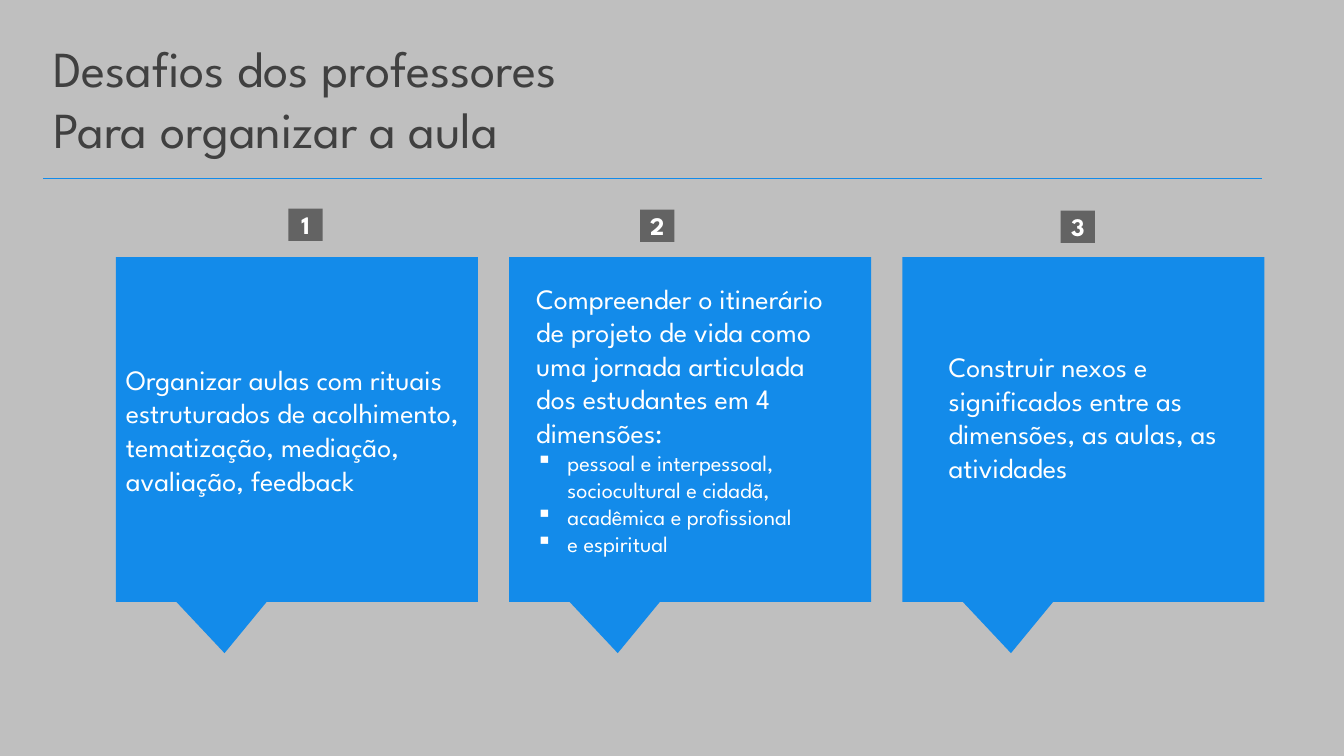
from dataclasses import dataclass

from lxml.etree import SubElement
from pptx import Presentation
from pptx.dml.color import RGBColor
from pptx.enum.shapes import MSO_CONNECTOR, MSO_SHAPE
from pptx.enum.text import MSO_ANCHOR, PP_ALIGN
from pptx.oxml.ns import qn
from pptx.util import Inches, Pt


@dataclass(frozen=True)
class Theme:
    font: str = "League Spartan"
    background: str = "BFBFBF"
    accent: str = "138BEA"
    badge: str = "636363"
    title: str = "404040"
    light: str = "FFFFFF"
    title_size: int = 36
    body_size: int = 20
    badge_size: int = 18
    bullet_size: int = 16


THEME = Theme()
CARD_LEFT, CARD_PITCH = 1.15, 3.9
BADGE_CORNERS = [(2.86, 2.07), (6.35, 2.08), (10.52, 2.09)]
RITUALS = ("Organizar aulas com rituais estruturados de acolhimento, "
           "tematização, mediação, avaliação, feedback")
JOURNEY = ("Compreender o itinerário de projeto de vida como uma jornada "
           "articulada dos estudantes em 4 dimensões:")
DIMENSIONS = [
    "pessoal e interpessoal, sociocultural e cidadã,",
    "acadêmica e profissional",
    "e espiritual",
]
CONNECTIONS = ("Construir nexos e significados entre as dimensões, "
               "as aulas, as atividades")


def color(value):
    return RGBColor.from_string(value)


def add_paragraph(frame, text, size, ink=THEME.light, bold=False,
                  align=PP_ALIGN.LEFT):
    first = frame.paragraphs[0]
    paragraph = frame.add_paragraph() if first.runs else first
    paragraph.text = text
    paragraph.alignment = align
    paragraph.font.name = THEME.font
    paragraph.font.size = Pt(size)
    paragraph.font.bold = bold
    paragraph.font.color.rgb = color(ink)
    return paragraph


def add_bullet(frame, text):
    properties = add_paragraph(frame, text, THEME.bullet_size)._p.get_or_add_pPr()
    properties.set("marL", str(Inches(0.31)))
    properties.set("indent", str(-Inches(0.31)))
    bullet = SubElement(properties, qn("a:buChar"))
    bullet.set("char", "▪")
    properties.insert_element_before(bullet, "a:tabLst", "a:defRPr", "a:extLst")


def add_text_frame(slide, left, top, width, height):
    area = slide.shapes.add_textbox(Inches(left), Inches(top),
                                    Inches(width), Inches(height))
    area.text_frame.word_wrap = True
    return area.text_frame


def add_block(slide, preset, left, top, width, height, fill):
    block = slide.shapes.add_shape(preset, Inches(left), Inches(top),
                                   Inches(width), Inches(height))
    block.shadow.inherit = False
    block.fill.solid()
    block.fill.fore_color.rgb = color(fill)
    block.line.fill.background()
    block.text_frame.word_wrap = True
    block.text_frame.vertical_anchor = MSO_ANCHOR.MIDDLE
    return block


def add_callout(slide, column):
    callout = add_block(slide, MSO_SHAPE.RECTANGULAR_CALLOUT,
                        CARD_LEFT + column * CARD_PITCH, 2.55, 3.59, 3.42,
                        THEME.accent)
    callout.adjustments[0] = -0.2
    callout.adjustments[1] = 0.649
    return callout.text_frame


def add_badge(slide, number, left, top):
    badge = add_block(slide, MSO_SHAPE.RECTANGLE, left, top, 0.34, 0.32,
                      THEME.badge)
    add_paragraph(badge.text_frame, str(number), THEME.badge_size, bold=True,
                  align=PP_ALIGN.CENTER)


def add_divider(slide):
    divider = slide.shapes.add_connector(MSO_CONNECTOR.STRAIGHT, Inches(0.43),
                                         Inches(1.77), Inches(12.52), Inches(1.77))
    divider.line.color.rgb = color(THEME.accent)
    divider.line.width = Pt(0.75)
    SubElement(divider._element.spPr, qn("a:effectLst"))


def main():
    deck = Presentation()
    deck.slide_width, deck.slide_height = Inches(13.33), Inches(7.5)
    slide = deck.slides.add_slide(deck.slide_layouts[6])
    slide.background.fill.solid()
    slide.background.fill.fore_color.rgb = color(THEME.background)

    add_divider(slide)
    heading = add_text_frame(slide, 0.43, 0.32, 12.9, 1.31)
    for line in ("Desafios dos professores", "Para organizar a aula"):
        add_paragraph(heading, line, THEME.title_size, THEME.title)

    rituals, _, _ = [add_callout(slide, column) for column in range(3)]
    add_paragraph(rituals, RITUALS, THEME.body_size)

    journey = add_text_frame(slide, 5.22, 2.74, 3.28, 3.23)
    add_paragraph(journey, JOURNEY, THEME.body_size)
    for dimension in DIMENSIONS:
        add_bullet(journey, dimension)

    connections = add_text_frame(slide, 9.31, 3.42, 3.11, 1.45)
    add_paragraph(connections, CONNECTIONS, THEME.body_size)

    for number, (left, top) in enumerate(BADGE_CORNERS, start=1):
        add_badge(slide, number, left, top)

    deck.save("out.pptx")


if __name__ == "__main__":
    main()
